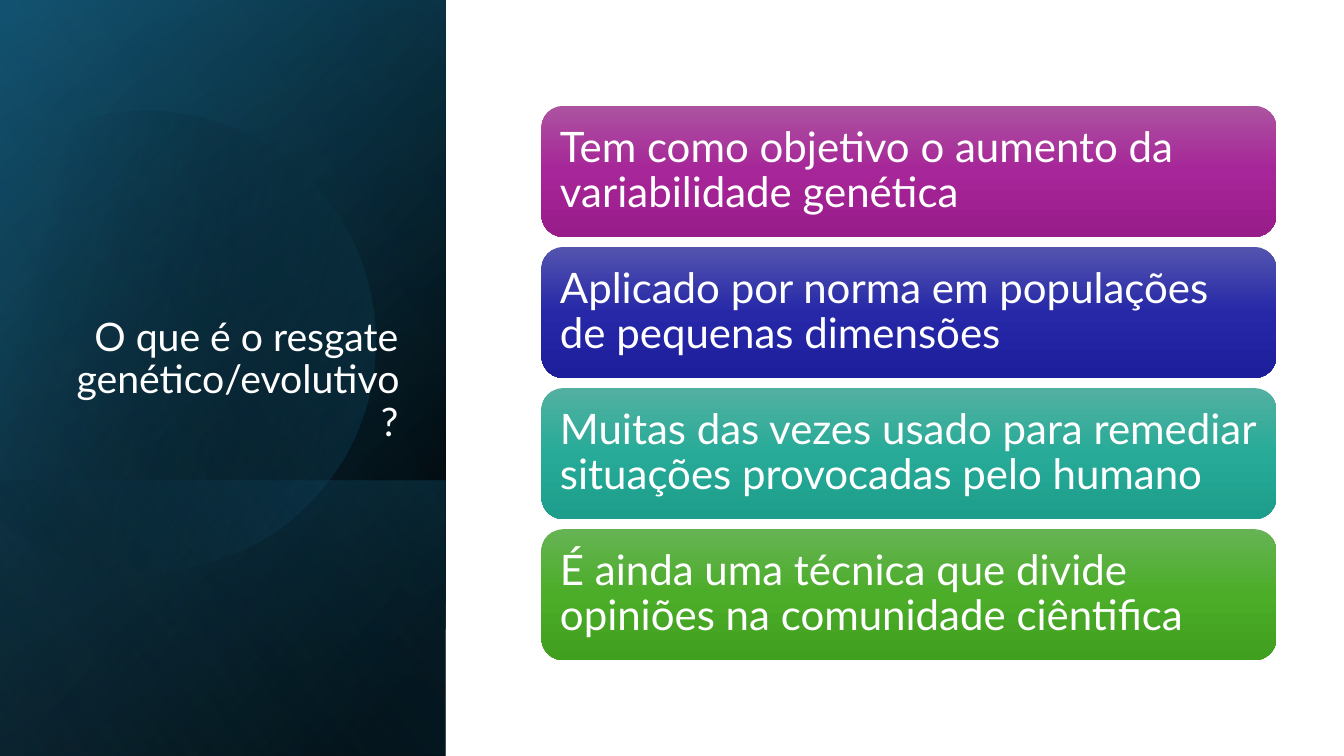
import dataclasses
import math

import lxml.etree
import pptx
import pptx.dml.color
import pptx.enum.shapes
import pptx.enum.text
import pptx.oxml.ns
import pptx.util

Inches = pptx.util.Inches
Kind = pptx.enum.shapes.MSO_SHAPE
Align = pptx.enum.text.PP_ALIGN
Anchor = pptx.enum.text.MSO_ANCHOR
qn = pptx.oxml.ns.qn


@dataclasses.dataclass
class Stop:
    pos: int
    color: str
    alpha: int = 100


@dataclasses.dataclass
class Layer:
    """A panel layer, given by its top, its height and its gradient."""
    top: float
    high: float
    angle: int
    stops: list[Stop]


@dataclasses.dataclass
class Card:
    text: str
    colors: tuple[str, str, str]


PANEL = 4.42
BASE = Layer(0, 7.5, 50, [Stop(8, "000000"), Stop(100, "104862")])
TINT = Layer(0, 7.5, 30, [Stop(0, "000000", 0), Stop(99, "156082", 46)])
FOOT = Layer(4.77, 2.73, 130, [Stop(2, "156082", 29), Stop(100, "000000", 30)])
GLOW = Layer(0, 7.5, 120, [Stop(0, "000000", 0), Stop(99, "46B1E1", 11)])
DISC = [Stop(29, "000000", 0), Stop(100, "156082", 43)]
TILT = 16.1
# Each step is one line (one point) or one curve (two handles and an end).
START = (1.49, 1.1)
STEPS = [
    [(2.46, 1.12), (3.35, 1.77), (3.63, 2.75)],
    [(3.98, 3.97), (3.28, 5.23), (2.07, 5.58)],
    [(1.31, 5.8), (0.53, 5.61), (-0.03, 5.14)],
    [(-0.15, 5.03)],
    [(-0.15, 1.75)],
    [(0, 1.61)],
    [(0.23, 1.42), (0.5, 1.28), (0.8, 1.19)],
    [(1.03, 1.13), (1.26, 1.1), START],
]
CARDS = [
    Card("Tem como objetivo o aumento da variabilidade genética",
         ("AC53A0", "A62598", "991C8B")),
    Card("Aplicado por norma em populações de pequenas dimensões",
         ("5354AE", "2628A8", "1D1E9B")),
    Card("Muitas das vezes usado para remediar situações provocadas pelo humano",
         ("53B0A1", "27AB98", "1D9D8B")),
    Card("É ainda uma técnica que divide opiniões na comunidade ciêntifica",
         ("66B354", "4BAD28", "409F1E")),
]


def rgb(code: str) -> pptx.dml.color.RGBColor:
    return pptx.dml.color.RGBColor.from_string(code)


def shade(shape, stops: list[Stop], angle: int) -> None:
    """Give the shape a clockwise linear gradient, no line and no shadow."""
    shape.shadow.inherit = False
    shape.line.fill.background()
    shape.fill.gradient()
    grad = shape.element.spPr.find(qn("a:gradFill"))
    grad.set("rotWithShape", "1")
    for child in list(grad):
        grad.remove(child)
    rows = lxml.etree.SubElement(grad, qn("a:gsLst"))
    for stop in stops:
        row = lxml.etree.SubElement(rows, qn("a:gs"), pos=str(stop.pos * 1000))
        color = lxml.etree.SubElement(row, qn("a:srgbClr"), val=stop.color)
        if stop.alpha < 100:
            lxml.etree.SubElement(color, qn("a:alpha"), val=str(stop.alpha * 1000))
    lxml.etree.SubElement(grad, qn("a:lin"), ang=str(angle * 60000), scaled="0")


def write(shape, text: str, *, size: int, align, anchor,
          inset: tuple[float, float, float, float], color: str = "FFFFFF") -> None:
    frame = shape.text_frame
    frame.word_wrap = True
    frame.auto_size = pptx.enum.text.MSO_AUTO_SIZE.NONE
    frame.vertical_anchor = anchor
    (frame.margin_left, frame.margin_top,
     frame.margin_right, frame.margin_bottom) = map(Inches, inset)
    para = frame.paragraphs[0]
    para.alignment = align
    para.line_spacing = 0.9
    para.space_before = pptx.util.Pt(0)
    run = para.add_run()
    run.text = text
    run.font.name = "Lato"
    run.font.size = pptx.util.Pt(size)
    run.font.color.rgb = rgb(color)


def add_layer(slide, layer: Layer) -> None:
    """Draw a layer lying on its side, so that its gradient turns with it."""
    left = (PANEL - layer.high) / 2
    top = layer.top + (layer.high - PANEL) / 2
    shape = slide.shapes.add_shape(
        Kind.RECTANGLE, Inches(left), Inches(top), Inches(layer.high), Inches(PANEL))
    shape.rotation = 90
    shape.element.spPr.find(qn("a:xfrm")).set("flipH", "1")
    shade(shape, layer.stops, layer.angle)


def spin(dot: tuple[float, float]) -> tuple[int, int]:
    """Turn a point clockwise about the disc's middle, in thousandths of an inch."""
    mid_x, mid_y = 1.585, 3.345
    dx, dy = dot[0] - mid_x, dot[1] - mid_y
    cos, sin = math.cos(math.radians(TILT)), math.sin(math.radians(TILT))
    return (round(1000 * (mid_x + dx * cos - dy * sin)),
            round(1000 * (mid_y + dx * sin + dy * cos)))


def add_disc(slide) -> None:
    """Draw the tilted circle that is cut off at the left edge of the panel."""
    form = slide.shapes.build_freeform(*spin(START), scale=Inches(1) / 1000)
    form.add_line_segments([spin(dot) for step in STEPS for dot in step], close=True)
    shape = form.convert_to_shape()
    lines = iter(list(shape.element.spPr.iter(qn("a:lnTo"))))
    for step in STEPS:
        parts = [next(lines) for _ in step]
        if len(parts) == 3:
            curve = lxml.etree.Element(qn("a:cubicBezTo"))
            parts[0].addprevious(curve)
            for part in parts:
                curve.append(part[0])
                part.getparent().remove(part)
    shape.rotation = 360 - TILT
    shade(shape, DISC, 30)


def add_title(slide) -> None:
    title = slide.shapes.title
    title.left, title.top = Inches(0.64), Inches(1.84)
    title.width, title.height = Inches(3.41), Inches(2.62)
    write(title, "O que é o resgate genético/evolutivo?", size=28,
          align=Align.RIGHT, anchor=Anchor.BOTTOM, inset=(0.1, 0.05, 0.1, 0.05))
    title.element.getparent().append(title.element)


def add_card(slide, card: Card, top: float) -> None:
    shape = slide.shapes.add_shape(
        Kind.ROUNDED_RECTANGLE, Inches(5.37), Inches(top), Inches(7.29), Inches(1.3))
    shade(shape, [Stop(pos, code) for pos, code in zip((0, 50, 100), card.colors)], 90)
    write(shape, card.text, size=30, align=Align.LEFT, anchor=Anchor.MIDDLE,
          inset=(0.12, 0.12, 0.1, 0.12))


def main() -> None:
    deck = pptx.Presentation()
    deck.slide_width, deck.slide_height = Inches(13.33), Inches(7.5)
    slide = deck.slides.add_slide(deck.slide_layouts.get_by_name("Title Only"))
    for layer in (BASE, TINT, FOOT):
        add_layer(slide, layer)
    add_disc(slide)
    add_layer(slide, GLOW)
    add_title(slide)
    for row, card in enumerate(CARDS):
        add_card(slide, card, 1.05 + 1.4 * row)
    deck.save("out.pptx")


if __name__ == "__main__":
    main()
